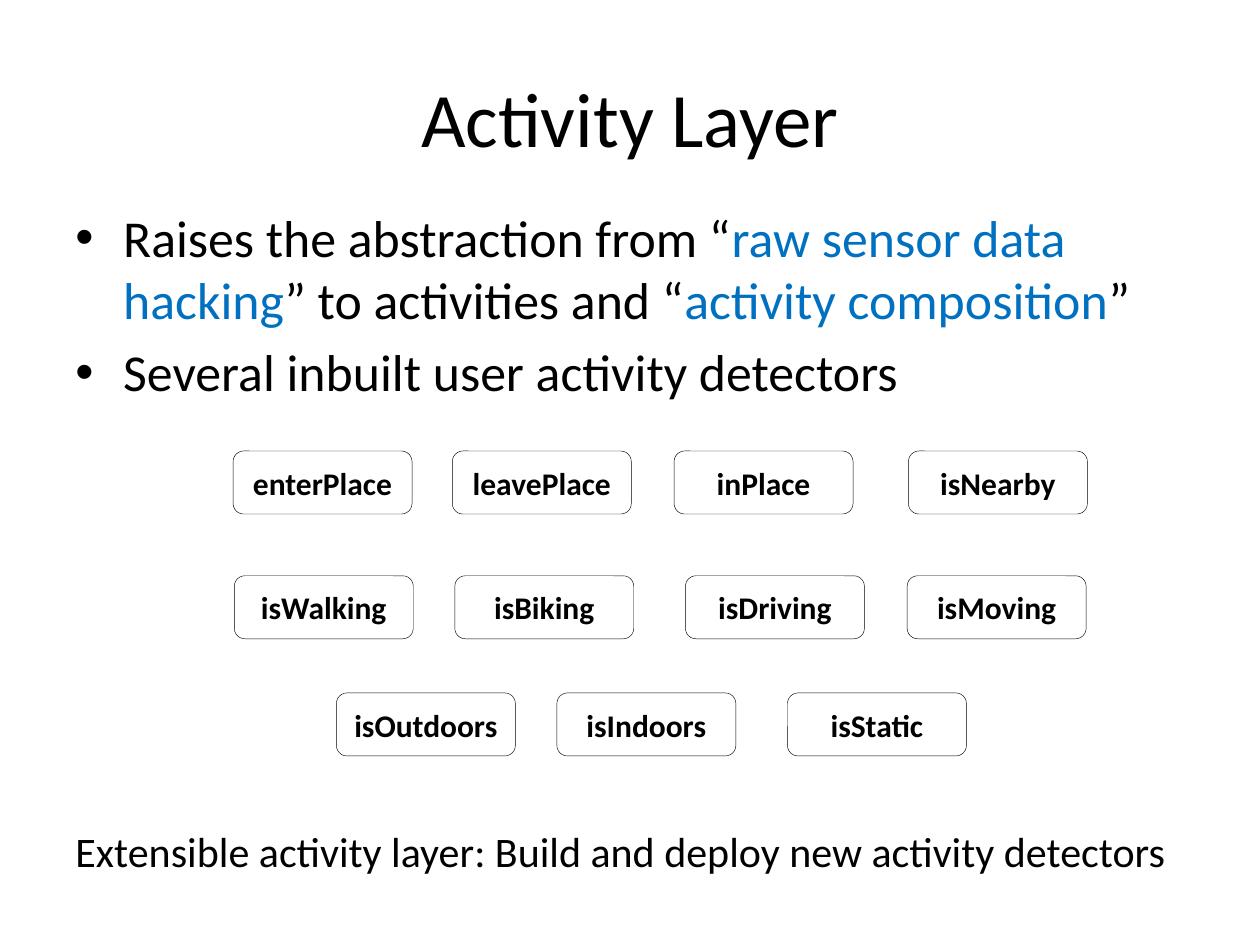
import pptx
import pptx.util
import pptx.dml.color
import pptx.enum.shapes
import pptx.enum.text
import lxml.etree
from pptx.oxml.ns import qn

# Content
TITLE = "Activity Layer"
BULLETS = [
    [("Raises the abstraction from “", "text"), ("raw sensor data hacking", "accent"),
     ("” to activities and “", "text"), ("activity composition", "accent"), ("”", "text")],
    [("Several inbuilt user activity detectors", "text")],
]
UPPER_COLUMNS = (1.85, 3.59, 5.35, 7.21)
LOWER_COLUMNS = (1.86, 3.61, 5.44, 7.2)
# Each row: top, indent, column positions, detector names
DETECTOR_ROWS = [
    (3.58, 0, UPPER_COLUMNS, ("enterPlace", "leavePlace", "inPlace", "isNearby")),
    (4.57, 0, LOWER_COLUMNS, ("isWalking", "isBiking", "isDriving", "isMoving")),
    (5.5, 0.81, LOWER_COLUMNS, ("isOutdoors", "isIndoors", "isStatic")),
]
FOOTER = "Extensible activity layer: Build and deploy new activity detectors"

# Style
COLORS = {"text": "000000", "accent": "0070C0", "box": "FFFFFF"}
FONT = "Calibri"
MARGIN = 0.5
BOX_WIDTH, BOX_HEIGHT = 1.42, 0.5
BULLET_INDENT = 0.38
Inches, Pt = pptx.util.Inches, pptx.util.Pt
MIDDLE = pptx.enum.text.MSO_ANCHOR.MIDDLE
CENTER = pptx.enum.text.PP_ALIGN.CENTER


def color(name):
    return pptx.dml.color.RGBColor.from_string(COLORS[name])


def format_run(run, size, color_name="text", bold=False):
    run.font.name = FONT
    run.font.size = Pt(size)
    run.font.bold = bold
    run.font.color.rgb = color(color_name)


def add_text_box(slide, left, top, width, height):
    box = slide.shapes.add_textbox(*map(Inches, (left, top, width, height)))
    box.text_frame.word_wrap = True
    return box.text_frame


def set_line(text_frame, text, size, alignment=None, bold=False):
    text_frame.text = text
    paragraph = text_frame.paragraphs[0]
    paragraph.alignment = alignment
    format_run(paragraph.runs[0], size, bold=bold)


def set_bullet(paragraph):
    properties = paragraph._p.get_or_add_pPr()
    properties.set("marL", str(Inches(BULLET_INDENT)))
    properties.set("indent", str(-Inches(BULLET_INDENT)))
    lxml.etree.SubElement(properties, qn("a:buFont"), typeface="Arial")
    lxml.etree.SubElement(properties, qn("a:buChar"), char="•")


def add_detector(slide, name, left, top):
    box = slide.shapes.add_shape(
        pptx.enum.shapes.MSO_SHAPE.ROUNDED_RECTANGLE,
        *map(Inches, (left, top, BOX_WIDTH, BOX_HEIGHT)))
    box.shadow.inherit = False
    box.fill.solid()
    box.fill.fore_color.rgb = color("box")
    box.line.color.rgb = color("text")
    box.line.width = Pt(0.25)
    box.text_frame.word_wrap = True
    box.text_frame.vertical_anchor = MIDDLE
    set_line(box.text_frame, name, 18, CENTER, bold=True)


def main():
    presentation = pptx.Presentation()
    presentation.slide_width, presentation.slide_height = Inches(10), Inches(7.5)
    slide = presentation.slides.add_slide(presentation.slide_layouts[6])

    # Title
    title = add_text_box(slide, MARGIN, 0.3, 9, 1.25)
    title.vertical_anchor = MIDDLE
    set_line(title, TITLE, 44, CENTER)

    # Bullets
    body = add_text_box(slide, MARGIN, 1.58, 9, 1.92)
    for index, parts in enumerate(BULLETS):
        paragraph = body.add_paragraph() if index else body.paragraphs[0]
        paragraph.space_before = Pt(6)
        set_bullet(paragraph)
        for text, color_name in parts:
            run = paragraph.add_run()
            run.text = text
            format_run(run, 29.6, color_name)

    # Detector boxes
    for top, indent, columns, names in DETECTOR_ROWS:
        for left, name in zip(columns, names):
            add_detector(slide, name, left + indent, top)

    # Footer
    set_line(add_text_box(slide, MARGIN, 6.5, 9.12, 0.5), FOOTER, 24)

    presentation.save("out.pptx")


if __name__ == "__main__":
    main()
